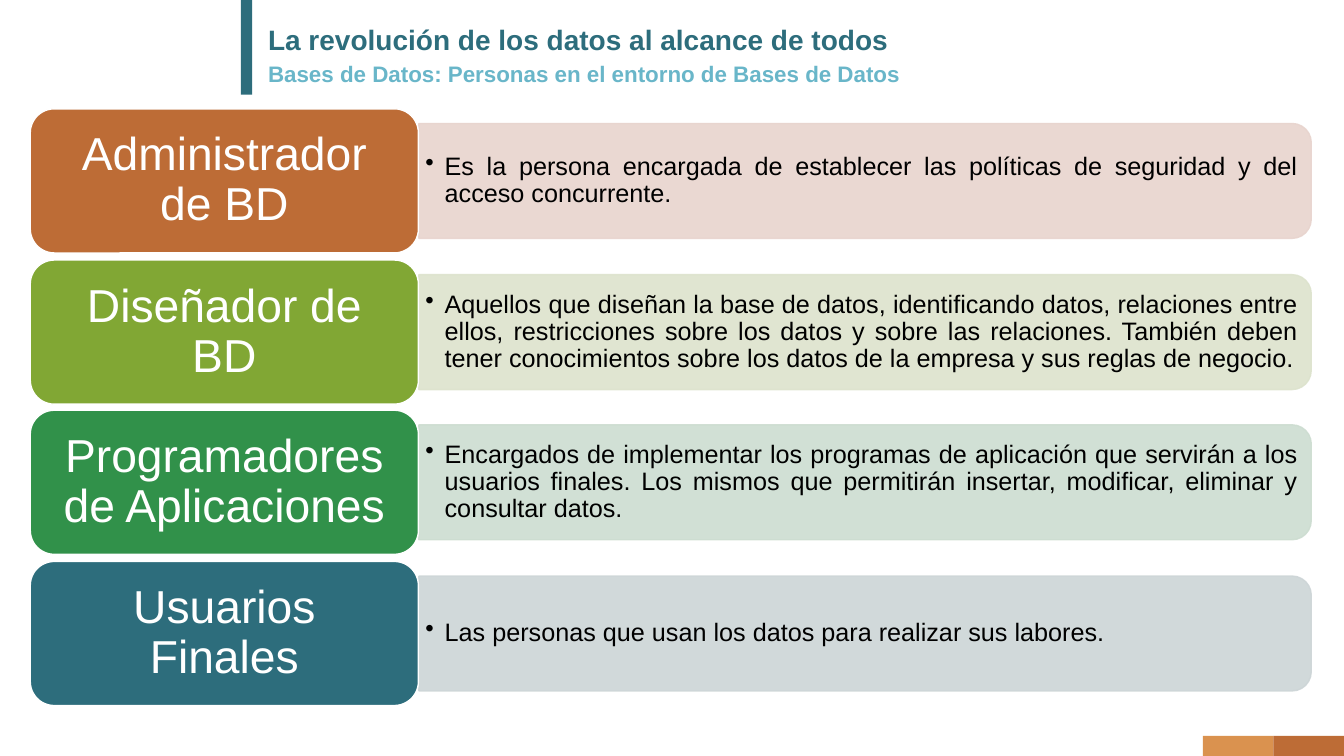
from lxml.etree import SubElement
from pptx import Presentation
from pptx.dml.color import RGBColor
from pptx.enum.shapes import MSO_SHAPE
from pptx.enum.text import MSO_ANCHOR, PP_ALIGN
from pptx.oxml.ns import qn
from pptx.util import Emu, Pt

PX = 9144  # 100 px to the inch
INK = {
    "teal": "2D6D7C", "sky": "69B6C9", "amber": "DA924F", "rust": "BD6C36",
    "lime": "81A734", "green": "31914A", "white": "FFFFFF", "black": "000000",
    "rust pale": "E8D4CE", "lime pale": "DDE3CD",
    "green pale": "CDDDD1", "teal pale": "CDD5D7",
}


def px(n):
    return Emu(n * PX)


def rgb(name):
    return RGBColor.from_string(INK[name])


class Deck:
    font = "Arial"

    def __init__(self, wide, high):
        self.prs = Presentation()
        self.prs.slide_width, self.prs.slide_height = px(wide), px(high)
        self.slide = self.prs.slides.add_slide(self.prs.slide_layouts[6])

    def shape(self, kind, box, fill, line=None, alpha=None):
        item = self.slide.shapes.add_shape(kind, *map(px, box))
        item.shadow.inherit = False
        item.fill.solid()
        item.fill.fore_color.rgb = rgb(fill)
        if line:
            item.line.color.rgb = rgb(line)
            item.line.width = Pt(1)
        else:
            item.line.fill.background()
        if alpha:
            for tone in item._element.spPr.iter(qn("a:srgbClr")):
                SubElement(tone, qn("a:alpha"), val=str(alpha * 1000))
        return item

    def label(self, item, text, size, ink, bold=False, align=PP_ALIGN.LEFT,
              anchor=MSO_ANCHOR.TOP, pad=(10, 5), bullet=False):
        frame = item.text_frame
        frame.word_wrap = True
        frame.vertical_anchor = anchor
        frame.margin_left = frame.margin_right = px(pad[0])
        frame.margin_top = frame.margin_bottom = px(pad[1])
        para = frame.paragraphs[0]
        para.text = text
        para.alignment = align
        para.line_spacing = 0.9
        if bullet:
            props = para._p.get_or_add_pPr()
            props.set("marL", str(px(19)))
            props.set("indent", str(px(-19)))
            SubElement(props, qn("a:buChar"), char="•")
        font = para.font
        font.name, font.size, font.bold = self.font, Pt(size), bold
        font.color.rgb = rgb(ink)

    def text(self, box, *args, **style):
        item = self.slide.shapes.add_textbox(*map(px, box))
        self.label(item, *args, **style)

    def role(self, top, name, note, ink, align):
        # Pale panel, turned so that its round corners face right
        panel = self.shape(MSO_SHAPE.ROUND_2_SAME_RECTANGLE,
                           (801, top - 371, 114, 885),
                           ink + " pale", ink + " pale", 90)
        panel.rotation = 90
        self.text((415, top + 20, 879, 103), note, 18, "black", align=align,
                  anchor=MSO_ANCHOR.MIDDLE, pad=(7, 4), bullet=True)
        # Coloured name tag
        tag = self.shape(MSO_SHAPE.ROUNDED_RECTANGLE,
                         (30, top, 385, 143), ink, "white")
        self.label(tag, name, 33, "white", align=PP_ALIGN.CENTER,
                   anchor=MSO_ANCHOR.MIDDLE, pad=(21, 14))


ROLES = [
    ("Administrador de BD",
     "Es la persona encargada de establecer las políticas de seguridad y del "
     "acceso concurrente.", "rust", PP_ALIGN.JUSTIFY),
    ("Diseñador de BD",
     "Aquellos que diseñan la base de datos, identificando datos, relaciones "
     "entre ellos, restricciones sobre los datos y sobre las relaciones. "
     "También deben tener conocimientos sobre los datos de la empresa y sus "
     "reglas de negocio.", "lime", PP_ALIGN.JUSTIFY),
    ("Programadores de Aplicaciones",
     "Encargados de implementar los programas de aplicación que servirán a "
     "los usuarios finales. Los mismos que permitirán insertar, modificar, "
     "eliminar y consultar datos.", "green", PP_ALIGN.JUSTIFY),
    ("Usuarios Finales",
     "Las personas que usan los datos para realizar sus labores.",
     "teal", PP_ALIGN.LEFT),
]


def main():
    deck = Deck(1333, 750)

    # Accent bars
    deck.shape(MSO_SHAPE.RECTANGLE, (239, 0, 11, 94), "teal")
    for i, ink in enumerate(("amber", "rust")):
        deck.shape(MSO_SHAPE.RECTANGLE, (1193 + 70 * i, 730, 70, 20), ink)

    # Heading
    deck.text((256, 21, 1045, 40),
              "La revolución de los datos al alcance de todos",
              20, "teal", bold=True)
    deck.text((256, 58, 1045, 40),
              "Bases de Datos: Personas en el entorno de Bases de Datos",
              16, "sky", bold=True)

    # Roles, evenly spaced from the first top to the last
    first, last = 108, 557
    for i, role in enumerate(ROLES):
        top = first + round(i * (last - first) / (len(ROLES) - 1))
        deck.role(top, *role)

    deck.prs.save("out.pptx")


if __name__ == "__main__":
    main()
